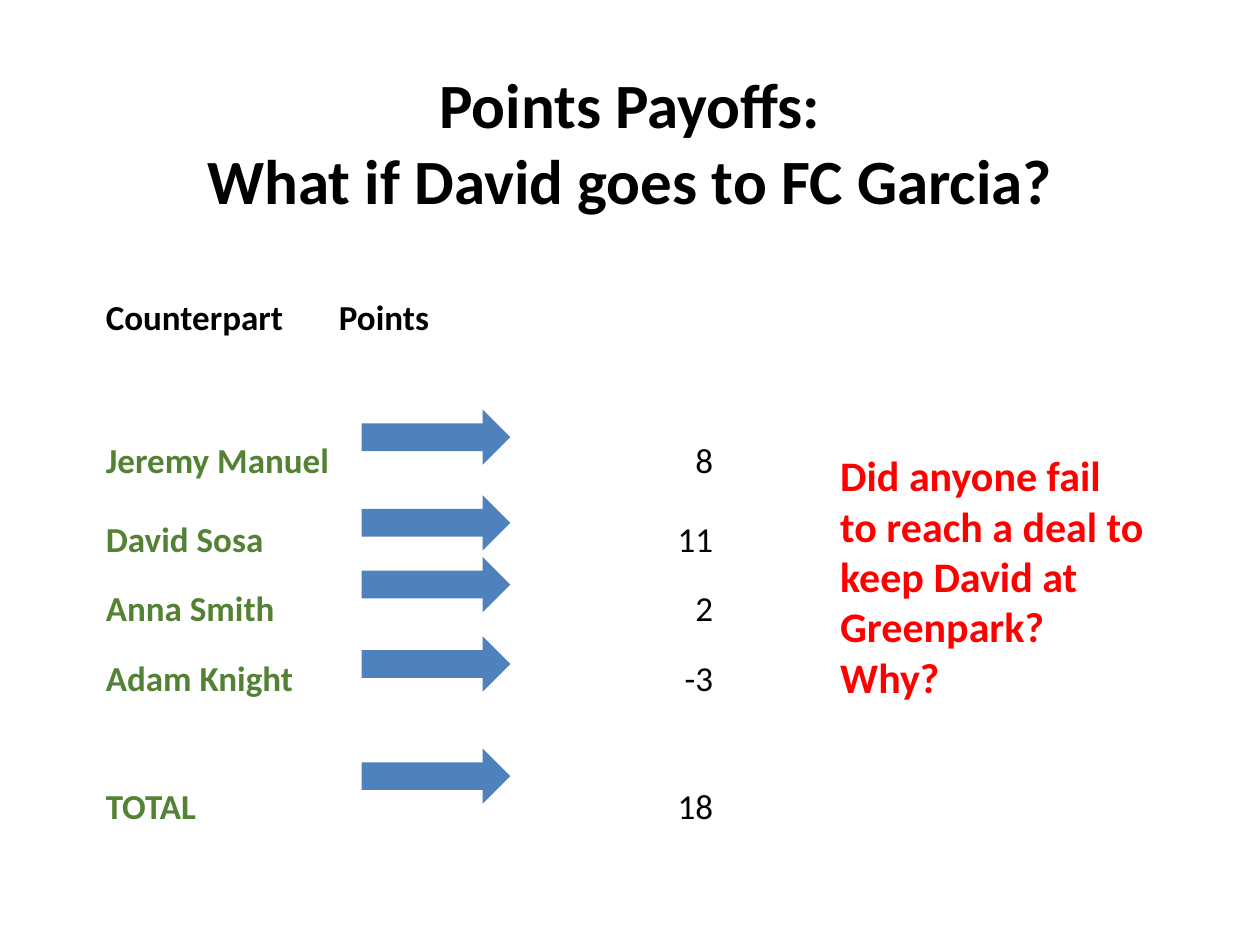
from pptx import Presentation
from pptx.dml.color import RGBColor
from pptx.enum.shapes import MSO_SHAPE
from pptx.enum.text import MSO_ANCHOR, PP_ALIGN
from pptx.util import Inches, Pt

BLACK, GREEN, RED, BLUE = "000000", "548235", "FF0000", "4F81BD"
PAYOFFS = [
    ("Counterpart", "Points"),
    ("", ""),
    ("Jeremy Manuel", "8"),
    ("David Sosa", "11"),
    ("Anna Smith", "2"),
    ("Adam Knight", "-3"),
    ("TOTAL", "18"),
]
COL_WIDTHS = [1.85, 2.99]
ROW_HEIGHTS = [0.68, 0.44, 0.69, 0.63, 0.55, 0.55, 1.02]
ARROW_TOPS = [3.25, 3.93, 4.42, 5.05, 5.94]


def rgb(color):
    return RGBColor.from_string(color)


def write(tf, text, size, color=BLACK, bold=True, align=PP_ALIGN.LEFT):
    tf.text = text
    for p in tf.paragraphs:
        p.alignment = align
        for r in p.runs:
            for name, value in {"name": "Calibri", "size": Pt(size), "bold": bold}.items():
                setattr(r.font, name, value)
            r.font.color.rgb = rgb(color)


def place_title(slide, left, top, width, height):
    sp = slide.shapes.title
    sp.left, sp.top = Inches(left), Inches(top)
    sp.width, sp.height = Inches(width), Inches(height)
    sp.text_frame.vertical_anchor = MSO_ANCHOR.MIDDLE
    write(sp.text_frame, "Points Payoffs:\vWhat if David goes to FC Garcia?", 36,
          align=PP_ALIGN.CENTER)


def format_cell(cell):
    margins = {"margin_left": 0.01, "margin_right": 0.01, "margin_top": 0.01, "margin_bottom": 0}
    for name, value in margins.items():
        setattr(cell, name, Inches(value))
    cell.vertical_anchor = MSO_ANCHOR.BOTTOM
    cell.fill.background()


def add_payoff_table(slide, left, top):
    table = slide.shapes.add_table(
        len(PAYOFFS), len(COL_WIDTHS), Inches(left), Inches(top),
        Inches(sum(COL_WIDTHS)), Inches(sum(ROW_HEIGHTS))).table
    table.first_row = table.horz_banding = False
    for column, width in zip(table.columns, COL_WIDTHS):
        column.width = Inches(width)
    for i, (row, height) in enumerate(zip(table.rows, ROW_HEIGHTS)):
        row.height = Inches(height)
        name, points = row.cells
        for cell in (name, points):
            format_cell(cell)
        is_header = i == 0
        write(name.text_frame, PAYOFFS[i][0], 20, BLACK if is_header else GREEN)
        write(points.text_frame, PAYOFFS[i][1], 20, bold=is_header,
              align=PP_ALIGN.LEFT if is_header else PP_ALIGN.RIGHT)


def add_arrows(slide, left, width, height):
    for top in ARROW_TOPS:
        sp = slide.shapes.add_shape(MSO_SHAPE.RIGHT_ARROW, Inches(left), Inches(top),
                                    Inches(width), Inches(height))
        sp.shadow.inherit = False
        sp.fill.solid()
        sp.fill.fore_color.rgb = rgb(BLUE)
        sp.line.fill.background()


def add_question(slide, left, top, width, height):
    tf = slide.shapes.add_textbox(Inches(left), Inches(top), Inches(width),
                                  Inches(height)).text_frame
    tf.word_wrap = True
    write(tf, "Did anyone fail to reach a deal to keep David at Greenpark? Why?", 24, RED)


def main():
    prs = Presentation()
    prs.slide_width, prs.slide_height = Inches(10), Inches(7.5)
    slide = prs.slides.add_slide(prs.slide_layouts.get_by_name("Title Only"))
    place_title(slide, 0.5, 0.3, 9, 1.64)
    add_payoff_table(slide, 0.83, 2.02)
    add_arrows(slide, 2.87, 1.18, 0.44)
    add_question(slide, 6.57, 3.52, 2.61, 2.12)
    prs.save("out.pptx")


if __name__ == "__main__":
    main()
